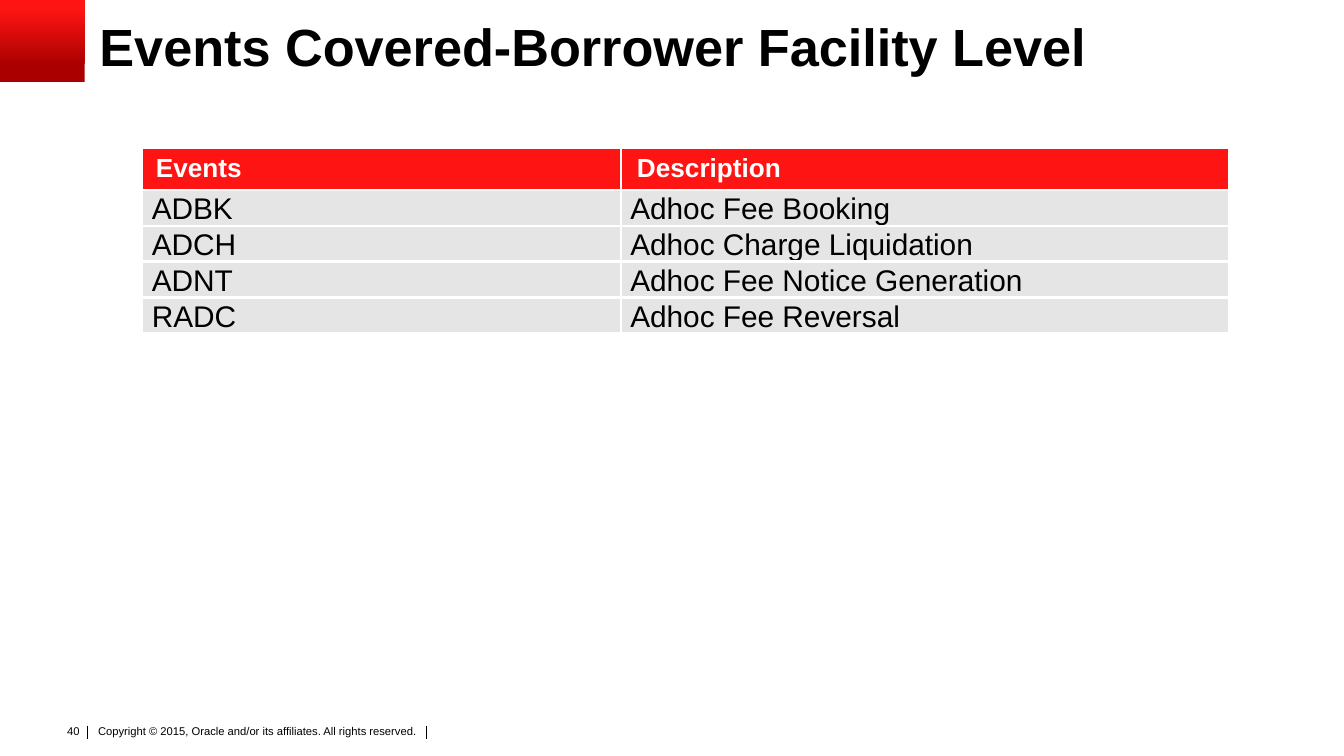
from pptx import Presentation, util as u
from pptx.dml.color import RGBColor
from pptx.enum import shapes, text
from pptx.oxml.ns import qn
from lxml import etree

TITLE = "Events Covered-Borrower Facility Level"
HEAD = ("Events", "Description")
ROWS = [
    ("ADBK", "Adhoc Fee Booking"),
    ("ADCH", "Adhoc Charge Liquidation"),
    ("ADNT", "Adhoc Fee Notice Generation"),
    ("RADC", "Adhoc Fee Reversal"),
]
PAGE = "40"
RIGHTS = "Copyright © 2015, Oracle and/or its affiliates. All rights reserved."

THEME = dict(font="Arial", ink="000000", paper="FFFFFF", red="FF1414",
             dark="AA0000", band="E5E5E5",
             title=28, head=14, body=16, foot=6, rule=0.5, edge=1.5)
WIDE = u.Inches(10)
HIGH = WIDE * 9 // 16
COLS = (3.56, 4.52)
HEAD_H, ROW_H = 0.31, 0.24
TOP, MID, LOW = (text.MSO_ANCHOR.TOP, text.MSO_ANCHOR.MIDDLE,
                 text.MSO_ANCHOR.BOTTOM)


def style(frame, words, size, ink="ink", bold=False, lead=None, align=None):
    """Fill a text frame with one formatted paragraph."""
    frame.text = words
    para = frame.paragraphs[0]
    para.alignment, para.line_spacing = align, lead
    for run in para.runs:
        run.font.name, run.font.size = THEME["font"], u.Pt(THEME[size])
        run.font.bold, run.font.color.rgb = bold, tint(ink)


def tint(name):
    return RGBColor.from_string(THEME[name])


def inset(item, left, top, right, low):
    item.margin_left, item.margin_top = u.Inches(left), u.Inches(top)
    item.margin_right, item.margin_bottom = u.Inches(right), u.Inches(low)


def label(slide, area, words, size, pads, anchor=TOP, **look):
    frame = slide.shapes.add_textbox(*map(u.Inches, area)).text_frame
    frame.word_wrap, frame.vertical_anchor = True, anchor
    inset(frame, *pads)
    style(frame, words, size, **look)


def rule(slide, x):
    """Short upright divider in the footer."""
    line = slide.shapes.add_connector(
        shapes.MSO_CONNECTOR.STRAIGHT,
        *map(u.Inches, (x, 5.4, x, 5.5)))
    line.line.color.rgb, line.line.width = tint("ink"), u.Pt(THEME["rule"])
    etree.SubElement(line._element.spPr, qn("a:effectLst"))


def border(cell, sides):
    props = cell._tc.get_or_add_tcPr()
    for spot, side in enumerate(sides):
        line = etree.Element(qn("a:ln" + side), w=str(u.Pt(THEME["edge"])))
        fill = etree.SubElement(line, qn("a:solidFill"))
        etree.SubElement(fill, qn("a:srgbClr"), val=THEME["paper"])
        props.insert(spot, line)


def corner(slide):
    box = slide.shapes.add_shape(shapes.MSO_SHAPE.RECTANGLE, 0, 0,
                                 u.Inches(0.63), u.Inches(0.61))
    box.shadow.inherit = False
    box.line.fill.background()
    box.fill.gradient()
    box.fill.gradient_angle = 90
    stops = ((0.2, "dark"), (0.9, "red"))
    for stop, (spot, name) in zip(box.fill.gradient_stops, stops):
        stop.position, stop.color.rgb = spot, tint(name)


def events(slide):
    data = [HEAD] + ROWS
    grid = slide.shapes.add_table(
        len(data), len(COLS), u.Inches(1.06), u.Inches(1.1),
        u.Inches(sum(COLS)), u.Inches(HEAD_H + ROW_H * len(ROWS))).table
    for col, wide in zip(grid.columns, COLS):
        col.width = u.Inches(wide)
    for r, row in enumerate(data):
        grid.rows[r].height = u.Inches(ROW_H if r else HEAD_H)
        for c, words in enumerate(row):
            cell = grid.cell(r, c)
            cell.fill.solid()
            cell.fill.fore_color.rgb = tint("band" if r else "red")
            border(cell, ("L" if c else "R") + ("TB" if r else "B"))
            if r:
                cell.vertical_anchor = LOW
                inset(cell, 0.07, 0, 0.07, 0)
                style(cell.text_frame, words, "body")
            else:
                cell.vertical_anchor = MID
                inset(cell, 0.1 + 0.02 * c, 0.04, 0.1, 0.04)
                style(cell.text_frame, words, "head", "paper", True)


def main():
    deck = Presentation()
    deck.slide_width, deck.slide_height = WIDE, HIGH
    slide = deck.slides.add_slide(deck.slide_layouts[6])
    label(slide, (0.69, 5.37, 2.74, 0.24), RIGHTS, "foot",
          (0.04, 0.02, 0.04, 0.02))
    for x in (0.65, 3.17):
        rule(slide, x)
    label(slide, (0.39, 5.34, 0.3, 0.2), PAGE, "foot",
          (0, 0.05, 0.1, 0.05), align=text.PP_ALIGN.RIGHT)
    corner(slide)
    label(slide, (0.74, 0.15, 9, 0.44), TITLE, "title", (0, 0, 0, 0),
          MID, bold=True, lead=0.9)
    events(slide)
    deck.save("out.pptx")


if __name__ == "__main__":
    main()
